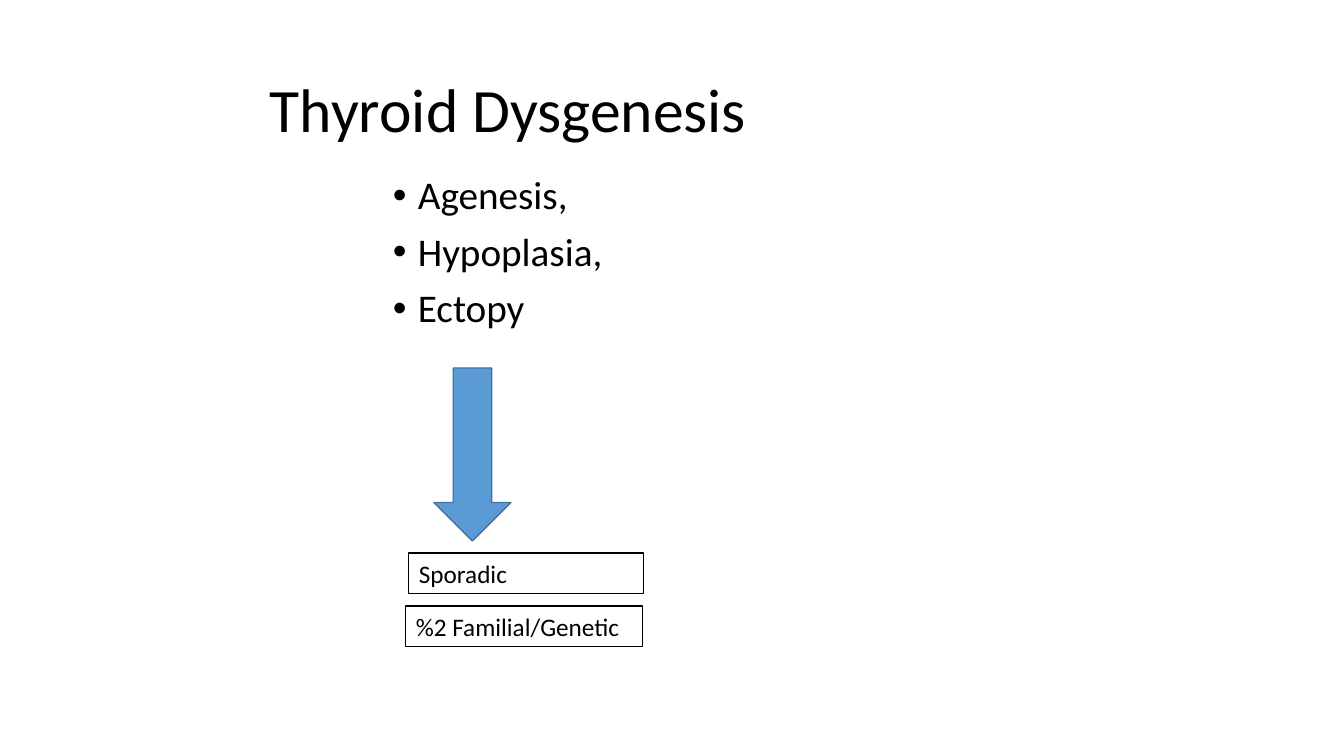
from dataclasses import dataclass
from typing import Any

from lxml.etree import SubElement
from pptx import Presentation
from pptx.dml.color import RGBColor
from pptx.enum.shapes import MSO_SHAPE
from pptx.enum.text import MSO_ANCHOR, MSO_AUTO_SIZE
from pptx.oxml.ns import qn
from pptx.slide import Slide
from pptx.util import Emu, Pt

SLIDE_WIDTH, SLIDE_HEIGHT = 1344, 756
SCALE = 12192000 / SLIDE_WIDTH
BLACK = RGBColor(0x00, 0x00, 0x00)
ARROW_BLUE = RGBColor(0x5B, 0x9B, 0xD5)
ARROW_EDGE = RGBColor(0x43, 0x73, 0x9E)


@dataclass(frozen=True)
class TextBlock:
    lines: tuple[str, ...]
    area: tuple[int, int, int, int]
    size: int
    frame_format: dict[str, Any]
    para_format: dict[str, Any]
    indent: int = 0
    bullet: str = ""
    outlined: bool = False


TITLE_FRAME = {"vertical_anchor": MSO_ANCHOR.MIDDLE}
LABEL_FRAME = {"auto_size": MSO_AUTO_SIZE.SHAPE_TO_FIT_TEXT}
TITLE_PARA = {"line_spacing": 0.9}
LIST_PARA = {"line_spacing": 0.9, "space_before": Pt(10)}

BLOCKS = (
    TextBlock(("Thyroid Dysgenesis",), (93, 40, 1159, 146), 44,
              TITLE_FRAME, TITLE_PARA, indent=167),
    TextBlock(("Agenesis,", "Hypoplasia,", "Ectopy"), (383, 171, 289, 221), 28,
              {}, LIST_PARA, indent=25, bullet="•"),
    TextBlock(("Sporadic",), (409, 553, 235, 41), 18,
              LABEL_FRAME, {}, outlined=True),
    TextBlock(("%2 Familial/Genetic",), (406, 606, 237, 41), 18,
              LABEL_FRAME, {}, outlined=True),
)
ARROW_AREA = (434, 368, 77, 173)


def px(length: int) -> Emu:
    return Emu(round(length * SCALE))


def apply(target: Any, values: dict[str, Any]) -> None:
    for name, value in values.items():
        setattr(target, name, value)


def indent_para(para: Any, indent: int, bullet: str) -> None:
    properties = para._p.get_or_add_pPr()
    properties.set("marL", str(px(indent)))
    properties.set("indent", str(-px(indent) if bullet else 0))
    if bullet:
        SubElement(properties, qn("a:buFont")).set("typeface", "Arial")
        SubElement(properties, qn("a:buChar")).set("char", bullet)


def draw_text(page: Slide, block: TextBlock) -> None:
    box = page.shapes.add_textbox(*map(px, block.area))
    frame = box.text_frame
    apply(frame, {"word_wrap": True, **block.frame_format})
    if block.outlined:
        box.line.color.rgb = BLACK
        box.line.width = Pt(0.75)
    for index, line in enumerate(block.lines):
        para = frame.add_paragraph() if index else frame.paragraphs[0]
        apply(para, block.para_format)
        indent_para(para, block.indent, block.bullet)
        span = para.add_run()
        span.text = line
        apply(span.font, {"name": "Calibri", "size": Pt(block.size)})
        span.font.color.rgb = BLACK


def draw_arrow(page: Slide) -> None:
    arrow = page.shapes.add_shape(MSO_SHAPE.DOWN_ARROW, *map(px, ARROW_AREA))
    arrow.shadow.inherit = False
    arrow.fill.solid()
    arrow.fill.fore_color.rgb = ARROW_BLUE
    arrow.line.color.rgb = ARROW_EDGE
    arrow.line.width = Pt(1)


def main() -> None:
    deck = Presentation()
    apply(deck, {"slide_width": px(SLIDE_WIDTH), "slide_height": px(SLIDE_HEIGHT)})
    page = deck.slides.add_slide(deck.slide_layouts[6])
    for block in BLOCKS:
        draw_text(page, block)
    draw_arrow(page)
    deck.save("out.pptx")


if __name__ == "__main__":
    main()
